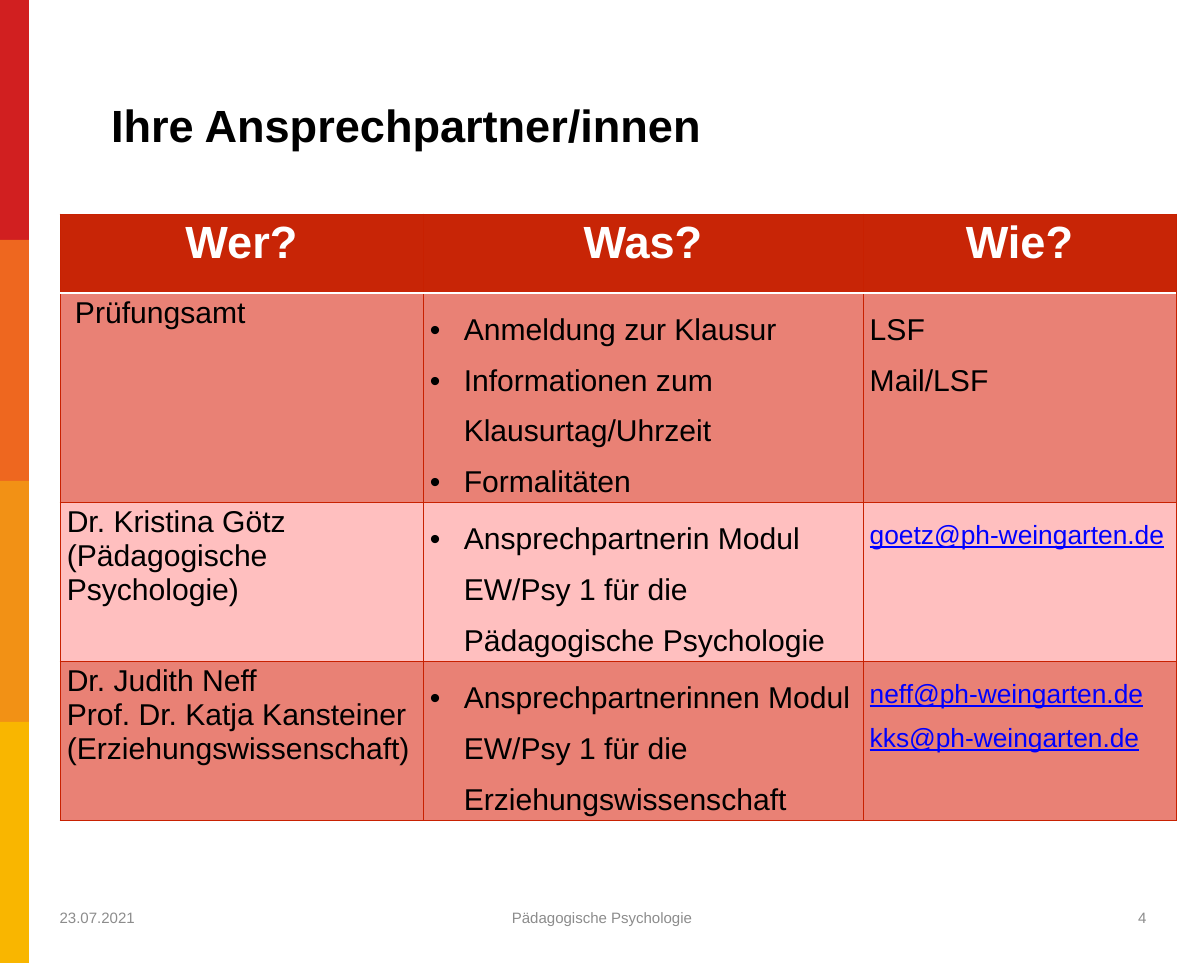
from dataclasses import dataclass

from lxml.etree import SubElement
from pptx import Presentation
from pptx.dml.color import RGBColor
from pptx.enum.shapes import MSO_SHAPE as Shape
from pptx.enum.text import MSO_ANCHOR as Anchor, MSO_AUTO_SIZE as AutoSize, PP_ALIGN as Align
from pptx.oxml.ns import qn
from pptx.util import Emu, Pt


@dataclass(frozen=True)
class Theme:
    font: str = "Arial"
    ink: str = "000000"
    white: str = "FFFFFF"
    grey: str = "8C8C8C"
    link: str = "0000FF"
    header: str = "C82506"
    border: str = "C82101"
    dark_row: str = "E98175"
    light_row: str = "FFBFBF"
    bars: tuple = ("D11F20", "EE671F", "F29115", "F9B600")
    title_size: int = 48
    body_size: int = 32
    mail_size: int = 28
    footer_size: int = 16
    line_width: float = 0.75
    header_rule: float = 2


EMU_PER_PX = 13507
WIDTH, HEIGHT = 1204, 963
HEADINGS = ("Wer?", "Was?", "Wie?")
CONTACTS = (
    (
        ("Prüfungsamt",),
        ("Anmeldung zur Klausur", "Informationen zum Klausurtag/Uhrzeit", "Formalitäten"),
        ("LSF", "Mail/LSF"),
    ),
    (
        ("Dr. Kristina Götz", "(Pädagogische Psychologie)"),
        ("Ansprechpartnerin Modul EW/Psy 1 für die Pädagogische Psychologie",),
        ("goetz@ph-weingarten.de",),
    ),
    (
        ("Dr. Judith Neff", "Prof. Dr. Katja Kansteiner", "(Erziehungswissenschaft)"),
        ("Ansprechpartnerinnen Modul EW/Psy 1 für die Erziehungswissenschaft",),
        ("neff@ph-weingarten.de", "kks@ph-weingarten.de"),
    ),
)
COLUMN_WIDTHS = (363, 440, 313)
ROW_HEIGHTS = (79, 209, 159, 159)
FOOTERS = (
    ("23.07.2021", 53, 271, Align.LEFT),
    ("Pädagogische Psychologie", 399, 406, Align.CENTER),
    ("4", 850, 303, Align.RIGHT),
)


def px(length):
    return Emu(length * EMU_PER_PX)


class SlideBuilder:
    def __init__(self, deck, theme):
        self.theme = theme
        self.page = deck.slides.add_slide(deck.slide_layouts[5])

    def add_lines(self, frame, lines, size, color, bold=False, underline=False,
                  align=Align.LEFT, spacing=None, bullets=False):
        for index, line in enumerate(lines):
            para = frame.add_paragraph() if index else frame.paragraphs[0]
            para.alignment = align
            if spacing:
                para.line_spacing = spacing
            if bullets:
                self.bullet(para)
            span = para.add_run()
            span.text = line
            span.font.name = self.theme.font
            span.font.size = Pt(size)
            span.font.bold = bold
            span.font.underline = underline
            span.font.color.rgb = RGBColor.from_string(color)

    def bullet(self, para):
        props = para._p.get_or_add_pPr()
        props.set("marL", str(px(34)))
        props.set("indent", str(px(-34)))
        SubElement(props, qn("a:buFont"), typeface=self.theme.font)
        SubElement(props, qn("a:buChar"), char="•")

    def bar(self, left, top, width, height, color):
        box = self.page.shapes.add_shape(
            Shape.RECTANGLE, px(left), px(top), px(width), px(height))
        box.shadow.inherit = False
        box.fill.solid()
        box.fill.fore_color.rgb = RGBColor.from_string(color)
        box.line.fill.background()

    def title(self, text, left, top, width, height):
        box = self.page.shapes.title
        box.left, box.top, box.width, box.height = map(px, (left, top, width, height))
        frame = box.text_frame
        frame.auto_size = AutoSize.NONE
        frame.vertical_anchor = Anchor.MIDDLE
        frame.margin_left = frame.margin_right = px(4)
        frame.margin_top = frame.margin_bottom = px(4)
        self.add_lines(frame, [text], self.theme.title_size, self.theme.ink, bold=True)

    def text(self, text, left, top, width, height, align):
        box = self.page.shapes.add_textbox(px(left), px(top), px(width), px(height))
        frame = box.text_frame
        frame.word_wrap = True
        frame.vertical_anchor = Anchor.MIDDLE
        self.add_lines(frame, [text], self.theme.footer_size, self.theme.grey, align=align)

    def table(self, left, top, widths, heights):
        grid = self.page.shapes.add_table(
            len(heights), len(widths), px(left), px(top),
            px(sum(widths)), px(sum(heights))).table
        grid.horz_banding = False
        for column, width in zip(grid.columns, widths):
            column.width = px(width)
        for row, height in zip(grid.rows, heights):
            row.height = px(height)
        return grid

    def cell(self, cell, fill, white_side=None):
        cell.fill.solid()
        cell.fill.fore_color.rgb = RGBColor.from_string(fill)
        props = cell._tc.get_or_add_tcPr()
        for index, side in enumerate(("lnL", "lnR", "lnT", "lnB")):
            is_rule = side == white_side
            width = self.theme.header_rule if is_rule else self.theme.line_width
            color = self.theme.white if is_rule else self.theme.border
            line = SubElement(props, qn(f"a:{side}"), w=str(Pt(width)))
            SubElement(SubElement(line, qn("a:solidFill")), qn("a:srgbClr"), val=color)
            props.insert(index, line)

    def contacts(self, left, top):
        theme = self.theme
        grid = self.table(left, top, COLUMN_WIDTHS, ROW_HEIGHTS)
        for column, heading in enumerate(HEADINGS):
            cell = grid.cell(0, column)
            self.cell(cell, theme.header, "lnB")
            self.add_lines(cell.text_frame, [heading], theme.title_size, theme.white,
                           bold=True, align=Align.CENTER)
        for row, contact in enumerate(CONTACTS, start=1):
            fill = theme.dark_row if row % 2 else theme.light_row
            for column, lines in enumerate(contact):
                cell = grid.cell(row, column)
                self.cell(cell, fill, "lnT" if row == 1 else None)
                is_mail = "@" in lines[0]
                self.add_lines(cell.text_frame, lines,
                               theme.mail_size if is_mail else theme.body_size,
                               theme.link if is_mail else theme.ink,
                               underline=is_mail, spacing=1.5 if column else None,
                               bullets=column == 1)
        grid.cell(1, 0).margin_left = px(15)


def main():
    deck = Presentation()
    deck.slide_width, deck.slide_height = px(WIDTH), px(HEIGHT)
    theme = Theme()
    builder = SlideBuilder(deck, theme)
    count = len(theme.bars)
    for index, color in enumerate(theme.bars):
        top, bottom = HEIGHT * index // count, HEIGHT * (index + 1) // count
        builder.bar(0, top, 29, bottom - top, color)
    builder.title("Ihre Ansprechpartner/innen", 107, 59, 1045, 131)
    builder.contacts(60, 214)
    for text, left, width, align in FOOTERS:
        builder.text(text, left, 892, width, 51, align)
    deck.save("out.pptx")


if __name__ == "__main__":
    main()
